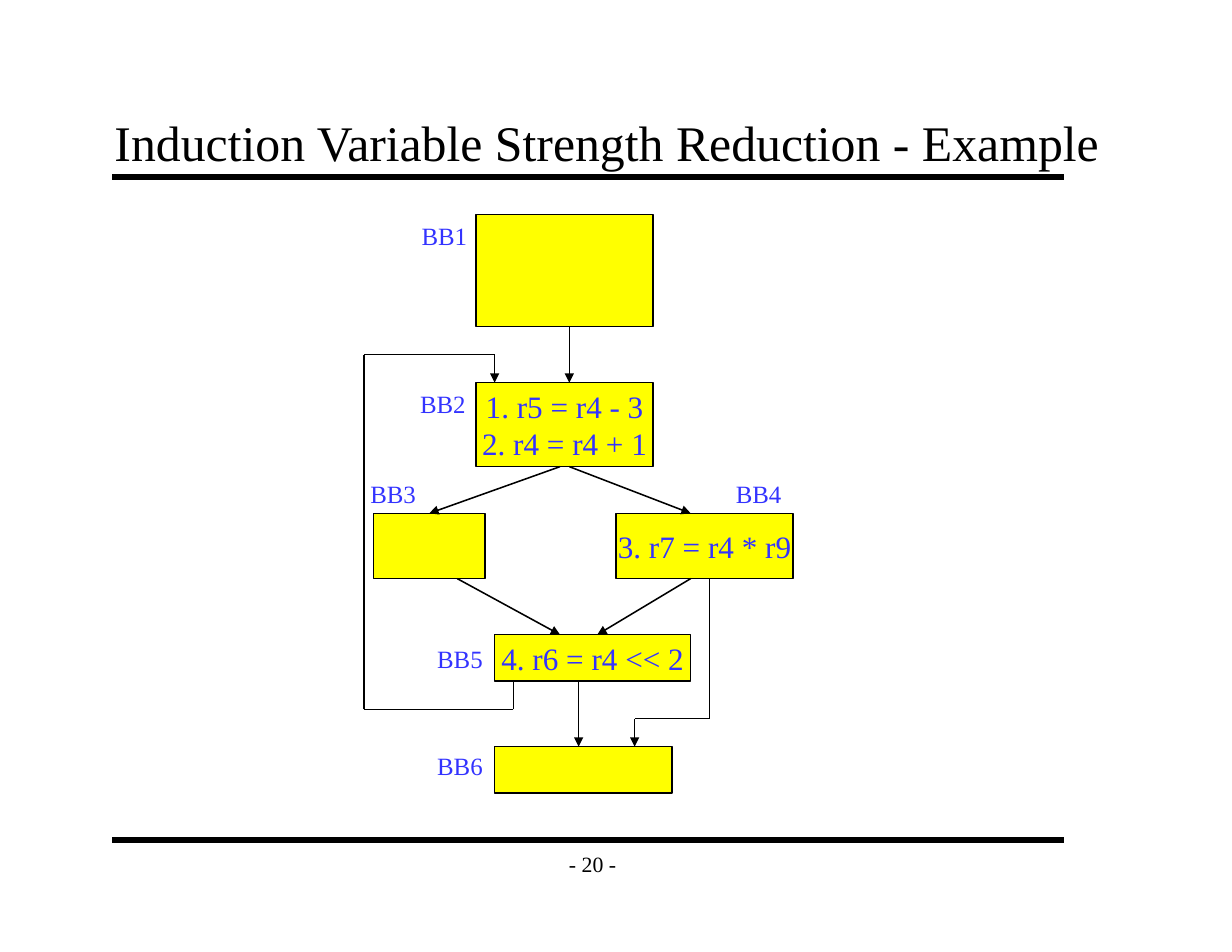
from itertools import pairwise

from lxml.etree import SubElement
from pptx import Presentation
from pptx.dml.color import RGBColor
from pptx.enum.shapes import MSO_CONNECTOR as Connector, MSO_SHAPE as Shape
from pptx.enum.text import MSO_ANCHOR as Anchor, MSO_AUTO_SIZE as AutoSize, PP_ALIGN as Align
from pptx.oxml.ns import qn
from pptx.util import Pt

BLACK = RGBColor(0x00, 0x00, 0x00)
BLUE = RGBColor(0x33, 0x33, 0xFF)
YELLOW = RGBColor(0xFF, 0xFF, 0x00)
TOP = 0


class FlowPage:
    """Holds the text style and the slide being drawn."""

    font = "Times New Roman"

    def __init__(self, page):
        self.page = page

    def fill_text(self, box, text, size, color, align, anchor, wrap=False, inset=(7.2, 3.6)):
        frame = box.text_frame
        frame.text = text
        frame.word_wrap = wrap
        frame.auto_size = AutoSize.NONE
        frame.vertical_anchor = anchor
        frame.margin_left = frame.margin_right = Pt(inset[0])
        frame.margin_top = frame.margin_bottom = Pt(inset[1])
        for para in frame.paragraphs:
            para.alignment = align
            for span in para.runs:
                span.font.name = self.font
                span.font.size = Pt(size)
                span.font.color.rgb = color

    def title(self, text, left, top, width, height):
        box = self.page.shapes.title
        box.left, box.top, box.width, box.height = map(Pt, (left, top, width, height))
        self.fill_text(box, text, 32, BLACK, Align.LEFT, Anchor.BOTTOM, True, (7.6, 4))

    def text(self, text, left, top, width, height, size=16, color=BLUE,
             align=Align.LEFT, anchor=Anchor.TOP):
        box = self.page.shapes.add_textbox(*map(Pt, (left, top, width, height)))
        self.fill_text(box, text, size, color, align, anchor)

    def block(self, text, left, top, width, height):
        box = self.page.shapes.add_shape(Shape.RECTANGLE, *map(Pt, (left, top, width, height)))
        box.shadow.inherit = False
        box.fill.solid()
        box.fill.fore_color.rgb = YELLOW
        box.line.color.rgb = BLACK
        box.line.width = Pt(1)
        if text:
            self.fill_text(box, text, 20, BLUE, Align.CENTER, Anchor.MIDDLE)
        return box

    def line(self, start, end, width=1, arrow=False):
        link = self.page.shapes.add_connector(Connector.STRAIGHT, *map(Pt, (*start, *end)))
        link.line.color.rgb = BLACK
        link.line.width = Pt(width)
        if arrow:
            SubElement(link.line._get_or_add_ln(), qn("a:tailEnd"), type="triangle")
        SubElement(link._element.spPr, qn("a:effectLst"))
        return link

    def route(self, *points):
        """Draws a bent path whose last leg carries the arrowhead."""
        for start, end in pairwise(points):
            link = self.line(start, end, arrow=end == points[-1])
        return link


deck = Presentation()
deck.slide_width, deck.slide_height = Pt(792), Pt(612)
flow = FlowPage(deck.slides.add_slide(deck.slide_layouts[5]))

# Frame: rules, page number and title
for y in (114, 540):
    flow.line((72, y), (684, y), width=4)
flow.text("- 20 -", 354, 540, 54, 30, 14, BLACK, Align.CENTER, Anchor.MIDDLE)
flow.title("Induction Variable Strength Reduction - Example", 66, 66, 666, 48)

# Basic blocks: text, left, top, width, height, then label left and top
blocks = {
    "BB1": ("", 306, 138, 114, 72, 264, 138),
    "BB2": ("1. r5 = r4 - 3\n2. r4 = r4 + 1", 306, 246, 114, 54, 263, 246),
    "BB3": ("", 240, 330, 72, 42, 231, 304),
    "BB4": ("3. r7 = r4 * r9", 396, 330, 114, 42, 466, 304),
    "BB5": ("4. r6 = r4 << 2", 318, 408, 126, 30, 274, 410),
    "BB6": ("", 318, 480, 114, 30, 274, 479),
}
boxes = {}
for name, (text, left, top, width, height, label_left, label_top) in blocks.items():
    boxes[name] = flow.block(text, left, top, width, height)
    flow.text(name, label_left, label_top, 44, 27)

# Forward edges
flow.route((366, 210), (366, 246))
flow.route((360, 300), (276, 330)).end_connect(boxes["BB3"], TOP)
flow.route((366, 300), (444, 330))
flow.route((294, 372), (360, 408))
flow.route((444, 372), (384, 408))
flow.route((372, 438), (372, 480))

# Loop back from BB5 to BB2, and exit from BB4 to BB6
flow.route((330, 438), (330, 456), (234, 456), (234, 228), (318, 228), (318, 246))
flow.route((456, 372), (456, 462), (408, 462), (408, 480))

deck.save("out.pptx")
